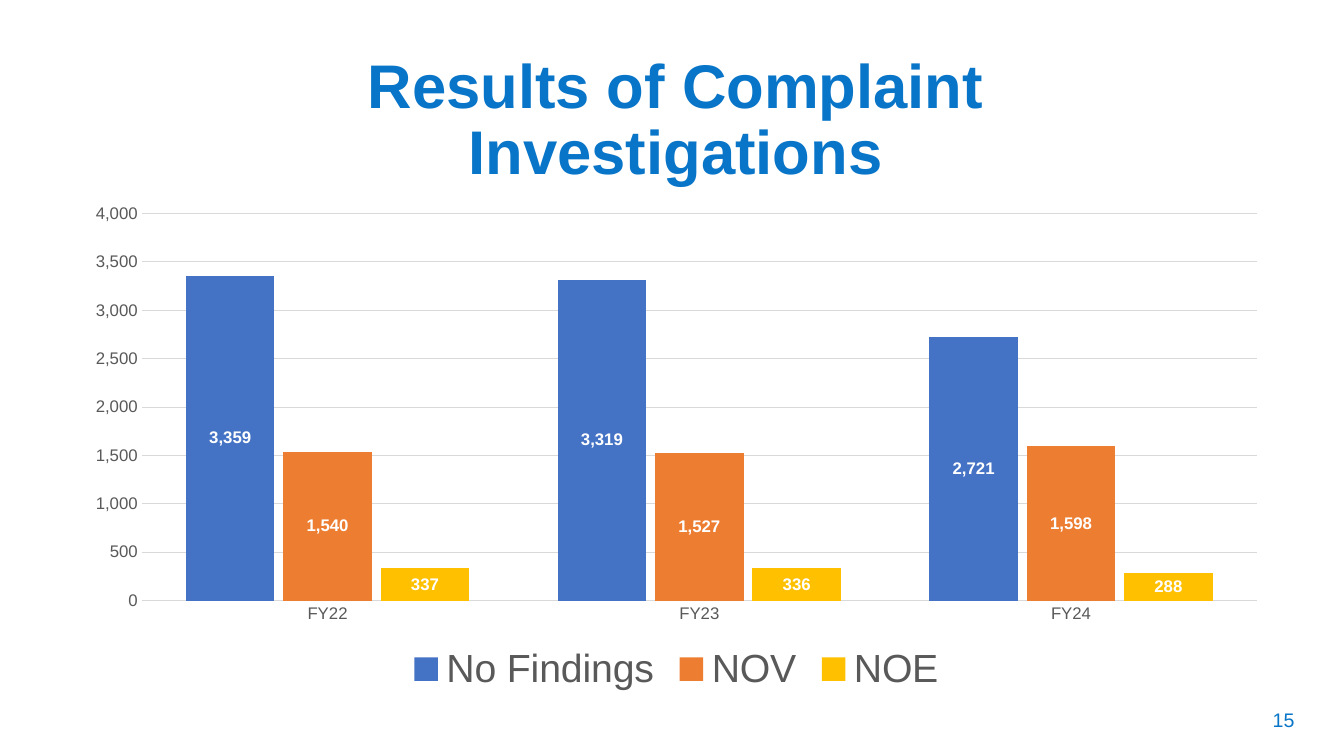
from pptx import Presentation
from pptx.chart.data import CategoryChartData
from pptx.dml.color import RGBColor
from pptx.enum.chart import (XL_CHART_TYPE, XL_LABEL_POSITION,
                             XL_LEGEND_POSITION, XL_TICK_MARK)
from pptx.enum.text import MSO_ANCHOR, PP_ALIGN
from pptx.util import Pt

# Content
TITLE = "Results of Complaint Investigations"
PAGE = "15"
YEARS = ["FY22", "FY23", "FY24"]
BLUE = RGBColor(0x08, 0x75, 0xC8)
GRAY = RGBColor(0x59, 0x59, 0x59)
RULE = RGBColor(0xD9, 0xD9, 0xD9)
WHITE = RGBColor(0xFF, 0xFF, 0xFF)
RESULTS = [
    ("No Findings", (3359, 3319, 2721), RGBColor(0x44, 0x72, 0xC4)),
    ("NOV", (1540, 1527, 1598), RGBColor(0xED, 0x7D, 0x31)),
    ("NOE", (337, 336, 288), RGBColor(0xFF, 0xC0, 0x00)),
]
FONT = "Arial"
COUNT = "#,##0"


def style(font, size, color, bold=False):
    font.name, font.size, font.bold = FONT, Pt(size), bold
    font.color.rgb = color


def add_text(slide, text, box, size, bold=False):
    frame = slide.shapes.add_textbox(*map(Pt, box)).text_frame
    frame.word_wrap = True
    frame.vertical_anchor = MSO_ANCHOR.MIDDLE
    frame.text = text
    para = frame.paragraphs[0]
    para.alignment = PP_ALIGN.CENTER
    para.line_spacing = 0.9
    style(para.runs[0].font, size, BLUE, bold)


def rule(line):
    line.color.rgb = RULE
    line.width = Pt(0.75)


deck = Presentation()
deck.slide_width, deck.slide_height = Pt(960), Pt(540)
slide = deck.slides.add_slide(deck.slide_layouts[6])

# Title and page number
add_text(slide, TITLE, (111.6, 34.6, 742.3, 104.4), 44, True)
add_text(slide, PAGE, (884.9, 500.4, 64, 28.8), 14)

# Chart
data = CategoryChartData(number_format=COUNT)
data.categories = YEARS
for name, counts, _ in RESULTS:
    data.add_series(name, counts)
box = map(Pt, (51.1, 139, 864, 360))
chart = slide.shapes.add_chart(XL_CHART_TYPE.COLUMN_CLUSTERED, *box, data).chart
chart.has_title = False
style(chart.font, 10, GRAY)

# Legend
chart.has_legend = True
chart.legend.position = XL_LEGEND_POSITION.BOTTOM
chart.legend.include_in_layout = False
style(chart.legend.font, 28, GRAY)

# Axes
years, scale = chart.category_axis, chart.value_axis
for axis in (years, scale):
    axis.major_tick_mark = axis.minor_tick_mark = XL_TICK_MARK.NONE
    style(axis.tick_labels.font, 12, GRAY)
rule(years.format.line)
scale.format.line.fill.background()
scale.minimum_scale, scale.maximum_scale, scale.major_unit = 0, 4000, 500
scale.tick_labels.number_format = COUNT
scale.tick_labels.number_format_is_linked = False
rule(scale.major_gridlines.format.line)

# Bars and their labels
plot = chart.plots[0]
plot.gap_width, plot.overlap = 100, -10
plot.vary_by_categories = False
for bars, (_, _, color) in zip(plot.series, RESULTS):
    bars.format.fill.solid()
    bars.format.fill.fore_color.rgb = color
    labels = bars.data_labels
    labels.show_value = True
    labels.position = XL_LABEL_POSITION.CENTER
    labels.number_format = COUNT
    labels.number_format_is_linked = False
    style(labels.font, 12, WHITE, True)

deck.save("out.pptx")
